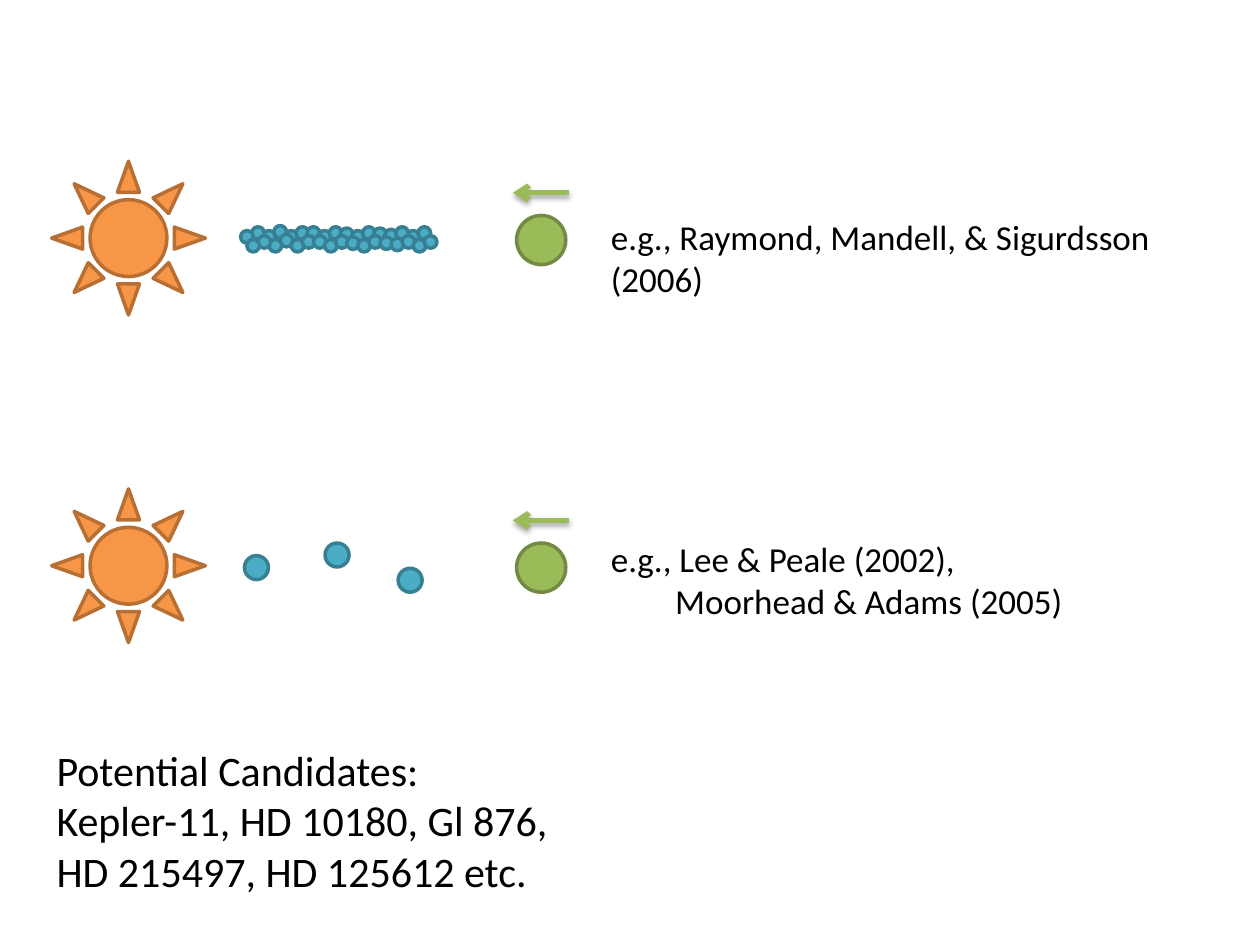
from lxml import etree
from pptx import Presentation
from pptx.dml.color import RGBColor
from pptx.enum.shapes import MSO_CONNECTOR, MSO_SHAPE
from pptx.oxml import parse_xml
from pptx.oxml.ns import nsdecls, qn
from pptx.util import Inches, Pt

SUN = MSO_SHAPE.SUN
CIRCLE = MSO_SHAPE.OVAL
STRAIGHT = MSO_CONNECTOR.STRAIGHT

# The slide is a grid of 100 columns by 75 rows of square cells.
COLUMNS, ROWS = 100, 75
CELL = Inches(10) / COLUMNS

STAR_COLORS = ("F79646", "B76F34")
PLANET_COLORS = ("9BBB59", "738A42")
ROCK_COLORS = ("4BACC6", "377F92")
TEXT_COLOR = "000000"

UPPER_TOP, LOWER_TOP = 12.8, 38.8
ROCK_PITCH = 0.88
# Height of each upper rock below the top of the star, from left to right.
ROCK_OFFSETS = (5.5, 5.2, 5.5, 5.1, 5.5, 5.2, 5.2, 5.5, 5.2,
                5.3, 5.5, 5.2, 5.3, 5.4, 5.2, 5.5, 5.2)
ROCK_ORDER = (*range(3, 16), 2, 1, 0, 16)
EMBRYOS = ((19.4, 5.3), (25.8, 4.3), (31.6, 6.3))

ARROW_SHADOW = (
    f'<a:effectLst {nsdecls("a")}>'
    '<a:outerShdw blurRad="39370" dist="22860" dir="5400000" rotWithShape="0">'
    '<a:srgbClr val="000000"><a:alpha val="35000"/></a:srgbClr>'
    '</a:outerShdw></a:effectLst>'
)


def cells(*counts):
    return [round(count * CELL) for count in counts]


def color(hex_string):
    return RGBColor.from_string(hex_string)


def add_body(group, kind, left, top, size, colors):
    """Add a star, planet or rock with its fill and outline colours."""
    shape = group.shapes.add_shape(kind, *cells(left, top, size, size))
    shape.shadow.inherit = False
    fill, outline = colors
    shape.fill.solid()
    shape.fill.fore_color.rgb = color(fill)
    shape.line.color.rgb = color(outline)
    shape.line.width = Pt(2)


def add_migration_arrow(group, top):
    arrow = group.shapes.add_connector(STRAIGHT, *cells(45.2, top, 40.7, top))
    arrow.line.color.rgb = color(PLANET_COLORS[0])
    arrow.line.width = Pt(3)
    line = arrow.line._get_or_add_ln()
    etree.SubElement(line, qn("a:tailEnd"), type="arrow")
    arrow._element.spPr.append(parse_xml(ARROW_SHADOW))


def add_system(slide, top):
    """Add a star with a giant planet migrating towards it."""
    group = slide.shapes.add_group_shape()
    add_body(group, SUN, 4.1, top, 12.2, STAR_COLORS)
    add_body(group, CIRCLE, 41, top + 4.3, 3.9, PLANET_COLORS)
    add_migration_arrow(group, top + 2.5)
    return group


def add_belt(group, top):
    """Add two staggered rows of rocks, the lower one in front."""
    for shift_right, shift_down in ((0, 0), (0.5, 0.7)):
        for index in ROCK_ORDER:
            left = 19.1 + index * ROCK_PITCH + shift_right
            rock_top = top + ROCK_OFFSETS[index] + shift_down
            add_body(group, CIRCLE, left, rock_top, 1, ROCK_COLORS)


def add_embryos(group, top):
    for left, offset in EMBRYOS:
        add_body(group, CIRCLE, left, top + offset, 1.9, ROCK_COLORS)


def add_text(slide, box, size, *lines):
    """Add a text box from (text, indent in cells) pairs."""
    frame = slide.shapes.add_textbox(*cells(*box)).text_frame
    frame.word_wrap = True
    font_format = {"name": "Calibri", "size": Pt(size)}
    for number, (text, indent) in enumerate(lines):
        paragraph = frame.add_paragraph() if number else frame.paragraphs[0]
        if indent:
            paragraph._p.get_or_add_pPr().set("marL", str(cells(indent)[0]))
        run = paragraph.add_run()
        run.text = text
        for name, value in font_format.items():
            setattr(run.font, name, value)
        run.font.color.rgb = color(TEXT_COLOR)


def main():
    presentation = Presentation()
    presentation.slide_width, presentation.slide_height = cells(COLUMNS, ROWS)
    slide = presentation.slides.add_slide(presentation.slide_layouts[6])

    add_embryos(add_system(slide, LOWER_TOP), LOWER_TOP)
    add_belt(add_system(slide, UPPER_TOP), UPPER_TOP)

    add_text(slide, (3.5, 58.6, 43.9, 13.1), 24,
             ("Potential Candidates: Kepler-11, HD 10180, Gl 876, "
              "HD 215497, HD 125612 etc.", 0))
    add_text(slide, (47.5, 16.6, 52.6, 4.4), 20,
             ("e.g., Raymond, Mandell, & Sigurdsson (2006)", 0))
    add_text(slide, (47.5, 42.2, 52.6, 7.7), 20,
             ("e.g., Lee & Peale (2002),", 0),
             ("Moorhead & Adams (2005)", 5.1))
    presentation.save("out.pptx")


if __name__ == "__main__":
    main()
